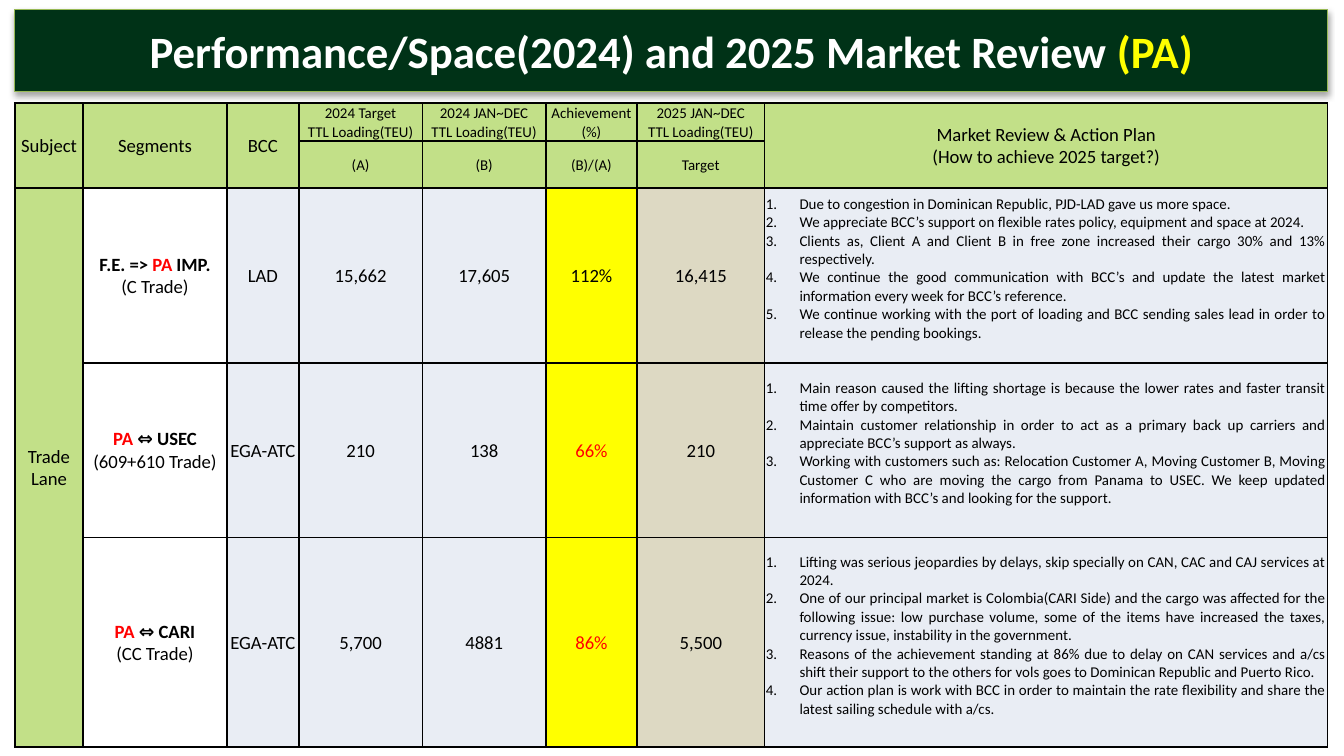
from lxml.etree import SubElement
from pptx import Presentation
from pptx.dml.color import RGBColor
from pptx.enum.shapes import MSO_SHAPE
from pptx.enum.text import MSO_ANCHOR, PP_ALIGN
from pptx.oxml.ns import qn
from pptx.util import Pt

BLACK = RGBColor(0x00, 0x00, 0x00)
WHITE = RGBColor(0xFF, 0xFF, 0xFF)
RED = RGBColor(0xFF, 0x00, 0x00)
YELLOW = RGBColor(0xFF, 0xFF, 0x00)
DARK_GREEN = RGBColor(0x00, 0x32, 0x17)
LINE_GREEN = RGBColor(0x98, 0xB9, 0x55)
LIGHT_GREEN = RGBColor(0xC2, 0xE0, 0x88)
PALE_BLUE = RGBColor(0xE9, 0xED, 0xF4)
TAN = RGBColor(0xDD, 0xD9, 0xC3)

LEFT, WIDTH = 7.9, 703.4
COLUMNS = [36.6, 77, 38.6, 66.2, 66.2, 48.8, 68.4, 301.6]
ROWS = [19.6, 25.2, 93.6, 93.6, 112.3]

TALL_HEADERS = {
    0: ["Subject"],
    1: ["Segments"],
    2: ["BCC"],
    7: ["Market Review & Action Plan", "(How to achieve 2025 target?)"],
}
SPLIT_HEADERS = [
    (["2024 Target", "TTL Loading(TEU)"], "(A)"),
    (["2024 JAN~DEC", "TTL Loading(TEU)"], "(B)"),
    (["Achievement", "(%)"], "(B)/(A)"),
    (["2025 JAN~DEC", "TTL Loading(TEU)"], "Target"),
]
# Segment name runs, trade, then BCC to 2025 target, then the action plan
TRADE_LANES = [
    ([("F.E. => ", BLACK), ("PA", RED), (" IMP.", BLACK)], "(C Trade)",
     ["LAD", "15,662", "17,605", "112%", "16,415"],
     ["Due to congestion in Dominican Republic, PJD-LAD gave us more space.",
      "We appreciate BCC’s support on flexible rates policy, equipment and space at 2024.",
      "Clients as, Client A and Client B in free zone increased their cargo 30% and 13% "
      "respectively.",
      "We continue the good communication with BCC’s and update the latest market "
      "information every week for BCC’s reference.",
      "We continue working with the port of loading and BCC sending sales lead in order to "
      "release the pending bookings."]),
    ([("PA ", RED), ("⇔ USEC", BLACK)], "(609+610 Trade)",
     ["EGA-ATC", "210", "138", "66%", "210"],
     ["Main reason caused the lifting shortage is because the lower rates and faster transit "
      "time offer by competitors.",
      "Maintain customer relationship in order to act as a primary back up carriers and "
      "appreciate BCC’s support as always.",
      "Working with customers such as: Relocation Customer A, Moving Customer B, "
      "Moving Customer C who are moving the cargo from Panama to USEC. We keep updated "
      "information with BCC’s and looking for the support."]),
    ([("PA ", RED), ("⇔ CARI", BLACK)], "(CC Trade)",
     ["EGA-ATC", "5,700", "4881", "86%", "5,500"],
     ["Lifting was serious jeopardies by delays, skip specially on CAN, CAC and CAJ services "
      "at 2024.",
      "One of our principal market is Colombia(CARI Side) and the cargo was affected for "
      "the following issue: low purchase volume, some of the items have increased the "
      "taxes, currency issue, instability in the government.",
      "Reasons of the achievement standing at 86% due to delay on CAN services and a/cs "
      "shift their support to the others for vols goes to Dominican Republic and Puerto Rico.",
      "Our action plan is work with BCC in order to maintain the rate flexibility and share the "
      "latest sailing schedule with a/cs."]),
]
VALUE_FILLS = [PALE_BLUE, PALE_BLUE, PALE_BLUE, YELLOW, TAN]


def add_run(p, text, size=10, color=BLACK, bold=False, font="Calibri"):
    r = p.add_run()
    r.text = text
    r.font.name = font
    r.font.size = Pt(size)
    r.font.bold = bold
    r.font.color.rgb = color


class SlideBuilder:
    def __init__(self, slide):
        self.slide = slide

    def banner(self, top, height, runs):
        sp = self.slide.shapes.add_shape(
            MSO_SHAPE.RECTANGLE, Pt(LEFT), Pt(top), Pt(WIDTH), Pt(height))
        sp.fill.solid()
        sp.fill.fore_color.rgb = DARK_GREEN
        sp.line.color.rgb = LINE_GREEN
        sp.line.width = Pt(0.75)
        self.drop_shadow(sp)
        tf = sp.text_frame
        tf.word_wrap = True
        tf.vertical_anchor = MSO_ANCHOR.MIDDLE
        p = tf.paragraphs[0]
        p.alignment = PP_ALIGN.CENTER
        for text, color in runs:
            add_run(p, text, size=24, color=color, bold=True)

    def drop_shadow(self, sp):
        sp.shadow.inherit = False
        effects = sp._element.spPr.find(qn("a:effectLst"))
        shadow = SubElement(effects, qn("a:outerShdw"), blurRad=str(Pt(3.1)),
                            dist=str(Pt(1.8)), dir="5400000", rotWithShape="0")
        color = SubElement(shadow, qn("a:srgbClr"), val=str(BLACK))
        SubElement(color, qn("a:alpha"), val="35000")

    def table(self, top):
        frame = self.slide.shapes.add_table(
            len(ROWS), len(COLUMNS), Pt(LEFT), Pt(top), Pt(WIDTH), Pt(sum(ROWS)))
        table = frame.table
        table.first_row = table.horz_banding = False
        for column, width in zip(table.columns, COLUMNS):
            column.width = Pt(width)
        for row, height in zip(table.rows, ROWS):
            row.height = Pt(height)
        for cell in table.iter_cells():
            self.borders(cell)
        return table

    def borders(self, cell):
        tc_pr = cell._tc.get_or_add_tcPr()
        for side in ("lnL", "lnR", "lnT", "lnB"):
            ln = SubElement(tc_pr, qn(f"a:{side}"), w=str(Pt(1)))
            fill = SubElement(ln, qn("a:solidFill"))
            SubElement(fill, qn("a:srgbClr"), val=str(BLACK))

    def cell(self, cell, lines, fill=None, align=PP_ALIGN.CENTER, numbered=False, **style):
        """Fill a cell; each line is a text or a list of bold (text, colour) runs."""
        cell.margin_left = cell.margin_right = cell.margin_top = Pt(0.7)
        cell.margin_bottom = Pt(8) if numbered else Pt(0)
        cell.vertical_anchor = MSO_ANCHOR.MIDDLE
        if fill is None:
            cell.fill.background()
        else:
            cell.fill.solid()
            cell.fill.fore_color.rgb = fill
        tf = cell.text_frame
        for i, line in enumerate(lines):
            p = tf.add_paragraph() if i else tf.paragraphs[0]
            p.alignment = align
            if numbered:
                self.number(p)
            if isinstance(line, str):
                add_run(p, line, **style)
            else:
                for text, color in line:
                    add_run(p, text, color=color, bold=True)

    def number(self, p):
        p_pr = p._p.get_or_add_pPr()
        p_pr.set("marL", str(Pt(18)))
        p_pr.set("indent", str(Pt(-18)))
        SubElement(p_pr, qn("a:buFont"), typeface="+mj-lt")
        SubElement(p_pr, qn("a:buAutoNum"), type="arabicPeriod")


def main():
    prs = Presentation()
    prs.slide_width, prs.slide_height = Pt(720), Pt(405)
    s = SlideBuilder(prs.slides.add_slide(prs.slide_layouts[6]))

    table = s.table(top=55.2)
    for col, lines in TALL_HEADERS.items():
        table.cell(0, col).merge(table.cell(1, col))
        s.cell(table.cell(0, col), lines, LIGHT_GREEN)
    for col, (lines, note) in enumerate(SPLIT_HEADERS, start=3):
        s.cell(table.cell(0, col), lines, LIGHT_GREEN, size=8)
        s.cell(table.cell(1, col), [note], LIGHT_GREEN, size=8)

    table.cell(2, 0).merge(table.cell(4, 0))
    s.cell(table.cell(2, 0), ["Trade Lane"], LIGHT_GREEN)
    for row, (segment, trade, values, plan) in enumerate(TRADE_LANES, start=2):
        s.cell(table.cell(row, 1), [segment, trade])
        for col, (value, fill) in enumerate(zip(values, VALUE_FILLS), start=2):
            missed = value.endswith("%") and int(value[:-1]) < 100
            s.cell(table.cell(row, col), [value], fill, color=RED if missed else BLACK)
        s.cell(table.cell(row, 7), plan, PALE_BLUE, PP_ALIGN.JUSTIFY, numbered=True, size=8)

    s.banner(5, 44, [("Performance/Space(2024) and 2025 Market Review ", WHITE),
                     ("(PA)", YELLOW)])
    prs.save("out.pptx")


if __name__ == "__main__":
    main()
